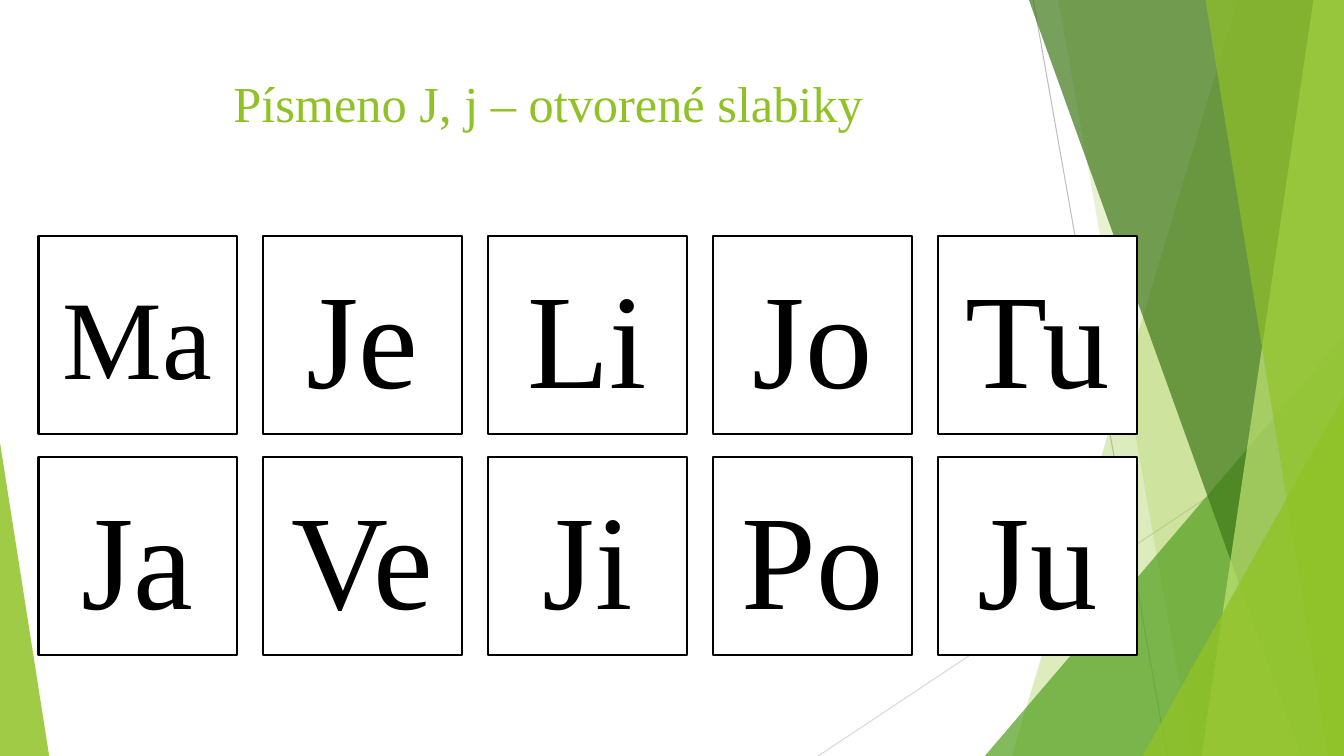
from lxml.etree import SubElement
from pptx import Presentation
from pptx.dml.color import RGBColor
from pptx.enum.shapes import MSO_CONNECTOR, MSO_SHAPE
from pptx.enum.text import MSO_ANCHOR, PP_ALIGN
from pptx.oxml.ns import qn
from pptx.util import Cm, Pt

WIDE, HIGH = 33.87, 19.05
FONT = "Times New Roman"
GREEN = "90C226"
ROWS = [["Ma", "Je", "Li", "Jo", "Tu"], ["Ja", "Ve", "Ji", "Po", "Ju"]]


def paint(fmt, color):
    """Set a solid colour on a fill."""
    fmt.solid()
    fmt.fore_color.rgb = RGBColor.from_string(color)


def tint(shape, color, alpha):
    """Fill a shape with a see-through colour and no outline."""
    shape.shadow.inherit = False
    paint(shape.fill, color)
    tone = shape.fill._xPr.find(qn("a:solidFill"))[0]
    SubElement(tone, qn("a:alpha")).set("val", str(alpha * 1000))
    shape.line.fill.background()


def write(frame, text, size, color):
    """Add one centred run to the first paragraph."""
    frame.word_wrap = True
    para = frame.paragraphs[0]
    para.alignment = PP_ALIGN.CENTER
    run = para.add_run()
    run.text = text
    run.font.name = FONT
    run.font.size = Pt(size)
    run.font.color.rgb = RGBColor.from_string(color)
    return para


def ray(slide, start, end, color):
    line = slide.shapes.add_connector(
        MSO_CONNECTOR.STRAIGHT, *map(Cm, start + end))
    line.line.width = Pt(0.75)
    paint(line.line.fill, color)
    SubElement(line._element.spPr, qn("a:effectLst"))


def band(slide, top, base, color, alpha):
    """Fill from a slanted edge to the right side of the slide."""
    pen = slide.shapes.build_freeform(Cm(top), 0)
    pen.add_line_segments([
        (Cm(WIDE), 0), (Cm(WIDE), Cm(HIGH)), (Cm(base), Cm(HIGH))])
    tint(pen.convert_to_shape(), color, alpha)


def wedge(slide, left, top, width, tip, color, alpha):
    """Stand a right triangle on the bottom edge."""
    shape = slide.shapes.add_shape(
        MSO_SHAPE.ISOSCELES_TRIANGLE,
        Cm(left), Cm(top), Cm(width), Cm(HIGH - top))
    shape.adjustments[0] = tip
    tint(shape, color, alpha)


def decor(slide):
    ray(slide, (26.04, 0), (29.41, HIGH), "BFBFBF")
    ray(slide, (WIDE, 10.24), (20.62, HIGH), "D9D9D9")
    band(slide, 31.19, 25.5, GREEN, 30)
    band(slide, 26.67, 30.05, GREEN, 20)
    wedge(slide, 24.82, 8.46, 9.05, 1, "54A021", 72)
    band(slide, 25.93, 32.79, "3F7819", 70)
    band(slide, 33.1, 30.28, "C0E474", 70)
    band(slide, 30.38, 33.48, GREEN, 65)
    wedge(slide, 28.8, 9.98, 5.07, 1, GREEN, 80)
    wedge(slide, 0, 11.15, 1.24, 0, GREEN, 85)


def title(slide, left, top, width, height):
    box = slide.shapes.add_textbox(Cm(left), Cm(top), Cm(width), Cm(height))
    write(box.text_frame, "Písmeno J, j – otvorené slabiky", 36, GREEN)


def card(slide, left, top, side, text):
    shape = slide.shapes.add_shape(
        MSO_SHAPE.RECTANGLE, Cm(left), Cm(top), Cm(side), Cm(side))
    shape.shadow.inherit = False
    paint(shape.fill, "FFFFFF")
    paint(shape.line.fill, "000000")
    shape.line.width = Pt(1.5)
    shape.text_frame.vertical_anchor = MSO_ANCHOR.MIDDLE
    size = 80 if text == "Ma" else 96
    write(shape.text_frame, text, size, "000000").space_before = Pt(10)


def cards(slide, left, top, width, height, side=5):
    """Spread the syllable cards evenly over the box."""
    across = (width - side) / (len(ROWS[0]) - 1)
    down = (height - side) / (len(ROWS) - 1)
    for row, words in enumerate(ROWS):
        for col, text in enumerate(words):
            card(slide, left + col * across, top + row * down, side, text)


def main():
    deck = Presentation()
    deck.slide_width, deck.slide_height = Cm(WIDE), Cm(HIGH)
    slide = deck.slides.add_slide(deck.slide_layouts[6])
    decor(slide)
    title(slide, 1.88, 1.7, 23.88, 3.66)
    cards(slide, 0.97, 5.94, 27.68, 10.57)
    deck.save("out.pptx")


if __name__ == "__main__":
    main()
